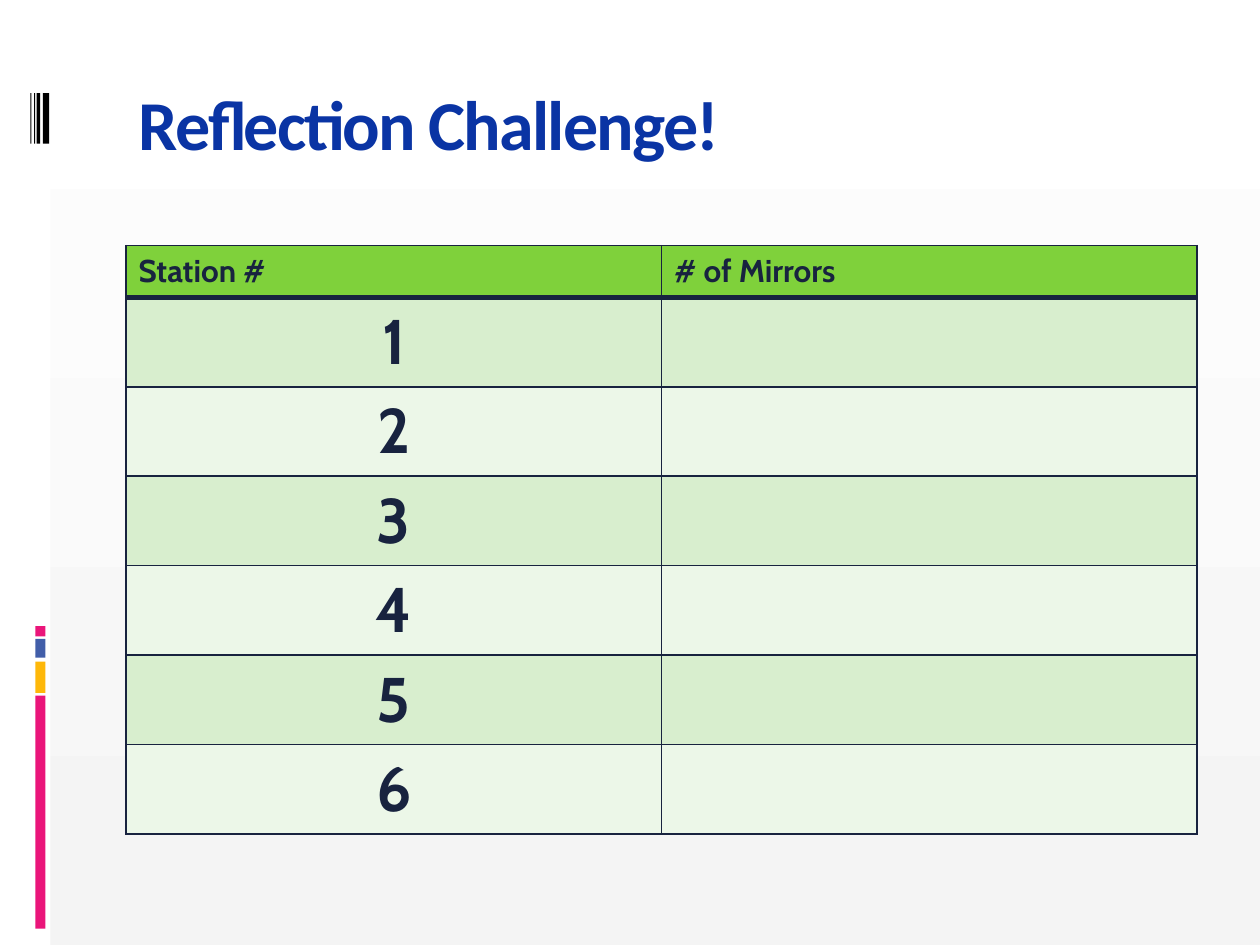
import pptx
import pptx.util
import pptx.dml.color
import pptx.enum.shapes
import pptx.enum.text
import pptx.oxml
import pptx.oxml.ns

Inches = pptx.util.Inches
Pt = pptx.util.Pt
HEX = {
    "white": "FFFFFF", "grey": "F4F4F4", "pink": "EA157A", "gold": "FEB80A",
    "blue": "425EA9", "black": "000000", "title": "0A34A4", "ink": "18233F",
    "head": "7FD13B", "odd": "D8EECE", "even": "ECF7E8",
}


def tint(name):
    return pptx.dml.color.RGBColor.from_string(HEX[name])


def write(para, text, font, size, color):
    run = para.add_run()
    run.text = text
    run.font.name = font
    run.font.size = Pt(size)
    run.font.bold = True
    run.font.color.rgb = tint(color)
    return run


deck = pptx.Presentation()
deck.slide_width = Inches(10)
deck.slide_height = Inches(7.5)
slide = deck.slides.add_slide(deck.slide_layouts[5])

back = slide.background.fill
back.gradient()
back.gradient_angle = 270
for stop, name, place in zip(back.gradient_stops, ("white", "grey"), (0, 1)):
    stop.color.rgb = tint(name)
    stop.position = place

bars = [
    (0, 0, 0.4, 7.5, "white"),
    (0.28, 5.52, 0.08, 1.85, "pink"),
    (0.28, 5.25, 0.08, 0.25, "gold"),
    (0.28, 5.07, 0.08, 0.15, "blue"),
    (0.28, 4.97, 0.08, 0.08, "pink"),
]
for left, width in ((0.34, 0.05), (0.29, 0.03), (0.27, 0.01), (0.24, 0.01)):
    bars.append((left, 0.74, width, 0.4, "black"))
for *box, name in bars:
    bar = slide.shapes.add_shape(
        pptx.enum.shapes.MSO_SHAPE.RECTANGLE, *[Inches(n) for n in box])
    bar.shadow.inherit = False
    bar.fill.solid()
    bar.fill.fore_color.rgb = tint(name)
    bar.line.fill.background()

title = slide.shapes.title
title.left, title.top = Inches(1), Inches(0.56)
title.width, title.height = Inches(8.5), Inches(1)
frame = title.text_frame
frame.vertical_anchor = pptx.enum.text.MSO_ANCHOR.TOP
frame.margin_top = Inches(0.08)
para = frame.paragraphs[0]
para.alignment = pptx.enum.text.PP_ALIGN.LEFT
run = write(para, "Reflection Challenge!", "Calibri", 40, "title")
run.font._element.set("spc", "-100")

rows = [("Station #", "# of Mirrors")] + [(str(n), "") for n in range(1, 7)]
table = slide.shapes.add_table(
    len(rows), 2, Inches(1), Inches(1.95), Inches(8.5), Inches(4.67)).table
for r, row in enumerate(rows):
    table.rows[r].height = Inches(0.71 if r else 0.41)
    name = "head" if r == 0 else "odd" if r % 2 else "even"
    for c, text in enumerate(row):
        cell = table.cell(r, c)
        para = cell.text_frame.paragraphs[0]
        if r:
            para.alignment = pptx.enum.text.PP_ALIGN.CENTER
        if text:
            write(para, text, "Cabin", 36 if r else 18, "ink")
        props = cell._tc.get_or_add_tcPr()
        for side in ("lnL", "lnR", "lnT", "lnB"):
            thick = (r, side) in ((0, "lnB"), (1, "lnT"))
            props.append(pptx.oxml.parse_xml(
                f'<a:{side} {pptx.oxml.ns.nsdecls("a")} w="{Pt(3 if thick else 1)}">'
                f'<a:solidFill><a:srgbClr val="{HEX["ink"]}"/></a:solidFill>'
                f'</a:{side}>'))
        cell.fill.solid()
        cell.fill.fore_color.rgb = tint(name)

deck.save("out.pptx")
